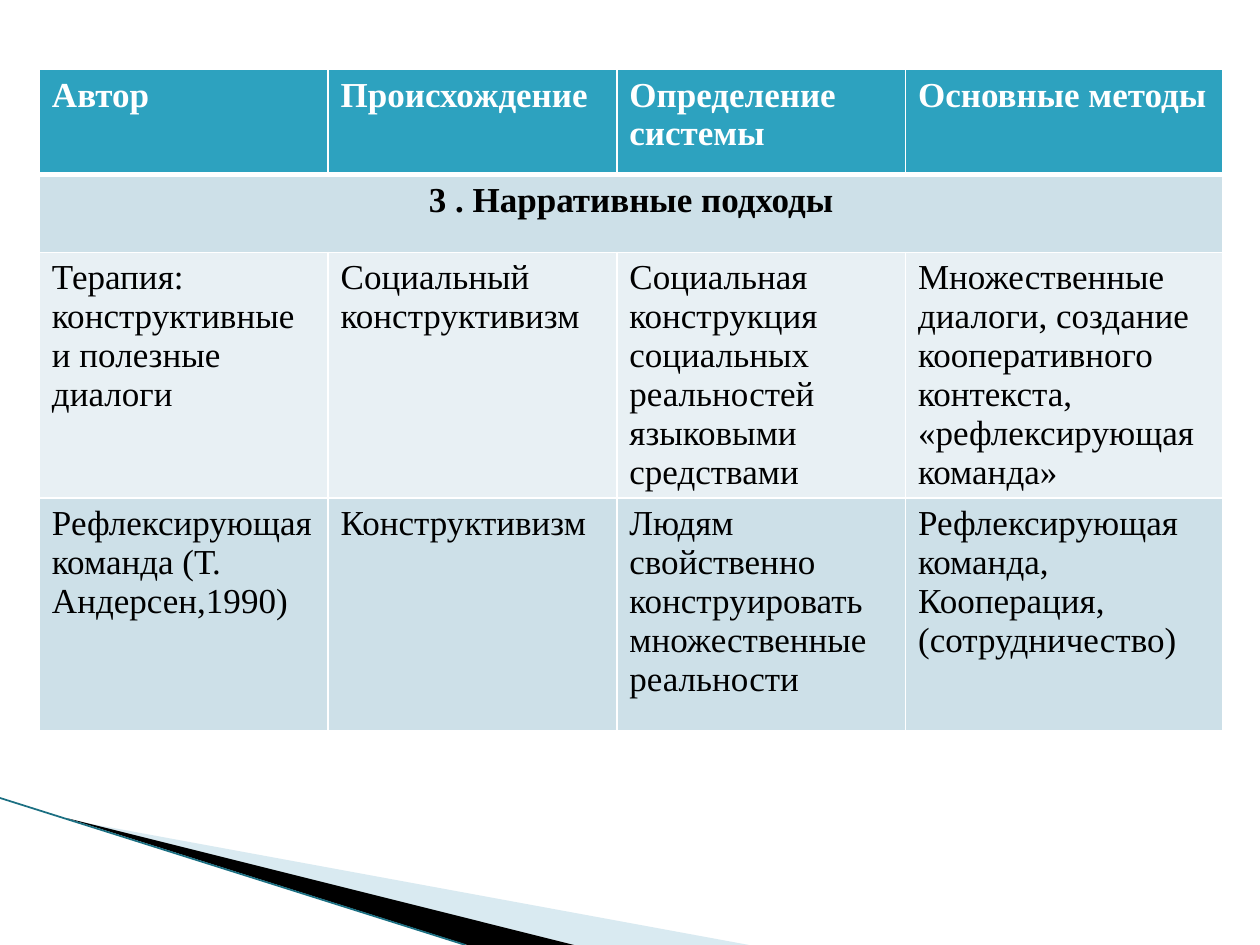
"""Build a slide with a table of narrative approaches above a wedge ornament."""
from dataclasses import dataclass

from lxml.etree import SubElement
from pptx import Presentation
from pptx.dml.color import RGBColor
from pptx.enum.shapes import MSO_CONNECTOR as CONN
from pptx.enum.text import PP_ALIGN as ALIGN
from pptx.oxml.ns import qn
from pptx.util import Pt

COLORS = {
    "white": "FFFFFF",
    "black": "000000",
    "header": "2DA2BF",
    "band": "CDE0E8",
    "pale_band": "E8F0F4",
    "pale_wedge": "A0CBDC",
    "edge": "1B6F82",
}
FONT = "Times New Roman"
COL_WIDTHS = (165, 165, 165, 181.5)


@dataclass
class Row:
    height: float
    fill: str
    texts: tuple[str, ...]
    color: str = "black"
    bold: bool = False
    top: float = 1
    bottom: float = 1


@dataclass
class Wedge:
    points: tuple[tuple[float, float], ...]
    color: str
    alpha: int = 100


ROWS = (
    Row(60, "header",
        ("Автор", "Происхождение", "Определение системы", "Основные методы"),
        color="white", bold=True, bottom=3),
    Row(44.5, "band", ("3 . Нарративные подходы", "", "", ""), bold=True, top=3),
    Row(133, "pale_band", (
        "Терапия: конструктивные и полезные диалоги",
        "Социальный конструктивизм",
        "Социальная конструкция социальных реальностей языковыми средствами",
        "Множественные диалоги, создание кооперативного контекста, "
        "«рефлексирующая команда»")),
    Row(133, "band", (
        "Рефлексирующая команда (Т. Андерсен,1990)",
        "Конструктивизм",
        "Людям свойственно конструировать множественные реальности",
        "Рефлексирующая команда,\nКооперация,\n(сотрудничество)")),
)
WEDGES = (
    Wedge(((39.5, 468.5), (428, 540), (328, 540)), "pale_wedge", 40),
    Wedge(((38, 467.5), (328, 540), (267, 540)), "black"),
)


def rgb(name: str) -> RGBColor:
    return RGBColor.from_string(COLORS[name])


def draw_wedge(slide, wedge: Wedge) -> None:
    start, *rest = [(Pt(x), Pt(y)) for x, y in wedge.points]
    builder = slide.shapes.build_freeform(*start)
    builder.add_line_segments(rest, close=True)
    sp = builder.convert_to_shape()
    sp.shadow.inherit = False
    sp.line.fill.background()
    sp.fill.solid()
    sp.fill.fore_color.rgb = rgb(wedge.color)
    if wedge.alpha < 100:
        clr = sp._element.spPr.find(f".//{qn('a:srgbClr')}")
        SubElement(clr, qn("a:alpha"), val=str(wedge.alpha * 1000))


def draw_edge(slide) -> None:
    line = slide.shapes.add_connector(CONN.STRAIGHT, Pt(0), Pt(456), Pt(266), Pt(540))
    line.line.color.rgb = rgb("edge")
    line.line.width = Pt(1)
    SubElement(line._element.spPr, qn("a:effectLst"))


def set_borders(cell, top: float, bottom: float) -> None:
    tc_pr = cell._tc.get_or_add_tcPr()
    for tag, width in (("lnL", 1), ("lnR", 1), ("lnT", top), ("lnB", bottom)):
        ln = SubElement(tc_pr, qn(f"a:{tag}"), w=str(Pt(width)))
        fill = SubElement(ln, qn("a:solidFill"))
        SubElement(fill, qn("a:srgbClr"), val=COLORS["white"])


def fill_cell(cell, text: str, row: Row) -> None:
    set_borders(cell, row.top, row.bottom)
    cell.fill.solid()
    cell.fill.fore_color.rgb = rgb(row.fill)
    cell.text_frame.text = text
    for p in cell.text_frame.paragraphs:
        for r in p.runs:
            r.font.name = FONT
            r.font.size = Pt(20)
            r.font.bold = row.bold
            r.font.color.rgb = rgb(row.color)


def draw_table(slide) -> None:
    width, height = sum(COL_WIDTHS), sum(row.height for row in ROWS)
    table = slide.shapes.add_table(len(ROWS), len(COL_WIDTHS), Pt(22.5), Pt(39.75),
                                   Pt(width), Pt(height)).table
    for column, col_width in zip(table.columns, COL_WIDTHS):
        column.width = Pt(col_width)
    for i, row in enumerate(ROWS):
        table.rows[i].height = Pt(row.height)
        for cell, text in zip(table.rows[i].cells, row.texts):
            fill_cell(cell, text, row)
    section = table.cell(1, 0)
    section.merge(table.cell(1, len(COL_WIDTHS) - 1))
    section.text_frame.paragraphs[0].alignment = ALIGN.CENTER


def main() -> None:
    prs = Presentation()
    prs.slide_width, prs.slide_height = Pt(720), Pt(540)
    slide = prs.slides.add_slide(prs.slide_layouts[6])
    for wedge in WEDGES:
        draw_wedge(slide, wedge)
    draw_edge(slide)
    draw_table(slide)
    prs.save("out.pptx")


if __name__ == "__main__":
    main()
